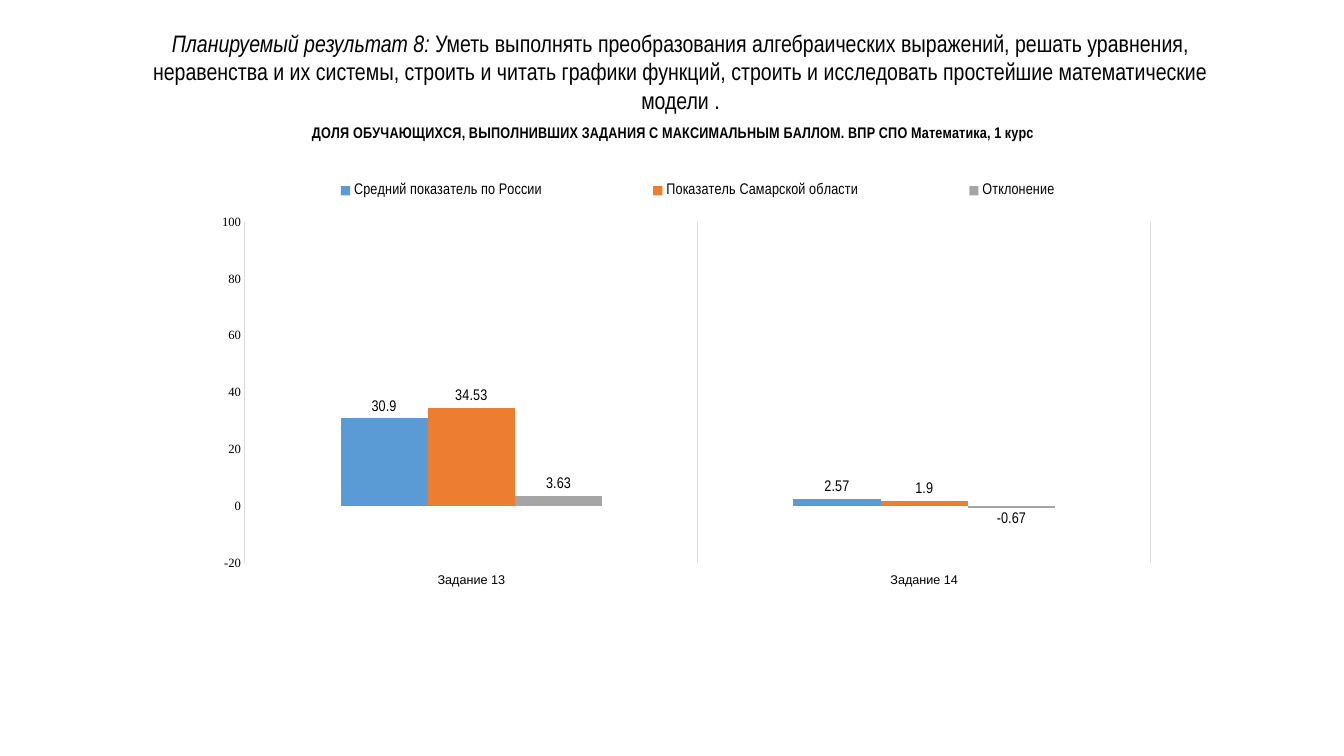
from pptx import Presentation
from pptx.chart.data import CategoryChartData as Data
from pptx.dml.color import RGBColor as Rgb
from pptx.enum.chart import XL_CHART_TYPE as Kind, XL_LABEL_POSITION as Spot
from pptx.enum.chart import XL_LEGEND_POSITION as Side, XL_TICK_LABEL_POSITION as Tick
from pptx.enum.chart import XL_TICK_MARK as Mark
from pptx.enum.text import MSO_ANCHOR as Anchor, PP_ALIGN as Align
from pptx.oxml import parse_xml
from pptx.oxml.ns import nsdecls
from pptx.util import Pt

PX = 9144  # one hundred px to the inch
COLORS = {"ink": "000000", "grid": "D9D9D9", "russia": "5B9BD5",
          "samara": "ED7D31", "gap": "A5A5A5"}
NARROW = "Arial Narrow"
TASKS = ["Задание 13", "Задание 14"]
SERIES = [("Средний показатель по России", (30.9, 2.57), "russia"),
          ("Показатель Самарской области", (34.53, 1.9), "samara"),
          ("Отклонение", (3.63, -0.67), "gap")]
GOAL = [("Планируемый результат 8: ", True),
        ("Уметь выполнять преобразования алгебраических выражений, решать уравнения, "
         "неравенства и их системы, строить и читать графики функций, строить и "
         "исследовать простейшие математические модели .", False)]
HEAD = ("ДОЛЯ ОБУЧАЮЩИХСЯ, ВЫПОЛНИВШИХ ЗАДАНИЯ С МАКСИМАЛЬНЫМ БАЛЛОМ. "
        "ВПР СПО Математика, 1 курс")


def px(*nums):
    return [n * PX for n in nums]


def color(name):
    return Rgb.from_string(COLORS[name])


def assign(obj, **vals):
    for key, val in vals.items():
        setattr(obj, key, val)


def style(font, size, name=NARROW, bold=False, italic=False):
    assign(font, size=Pt(size), name=name, bold=bold, italic=italic)
    font.color.rgb = color("ink")


def layout(x, y, w, h, inner=False):
    target = '<c:layoutTarget val="inner"/>' if inner else ""
    modes = "".join(f'<c:{k}Mode val="edge"/>' for k in "xy")
    sizes = "".join(f'<c:{k} val="{v}"/>' for k, v in zip("xywh", (x, y, w, h)))
    return parse_xml(f'<c:layout {nsdecls("c")}><c:manualLayout>{target}{modes}{sizes}'
                     '</c:manualLayout></c:layout>')


def add_goal(slide):
    title = slide.shapes.title
    box = dict(zip(("left", "top", "width", "height"), px(102, 23, 1146, 96)))
    assign(title, **box)
    frame = title.text_frame
    assign(frame, word_wrap=True, vertical_anchor=Anchor.TOP)
    para = frame.paragraphs[0]
    assign(para, alignment=Align.CENTER, line_spacing=1.0)
    for text, slant in GOAL:
        run = para.add_run()
        run.text = text
        style(run.font, 17, italic=slant)


def format_axis(axis, font):
    assign(axis, major_tick_mark=Mark.NONE, minor_tick_mark=Mark.NONE)
    axis.format.line.fill.background()
    style(axis.tick_labels.font, 9, font)


def add_legend(chart):
    chart.has_legend = True
    legend = chart.legend
    assign(legend, position=Side.TOP, include_in_layout=False)
    style(legend.font, 11)
    item = legend._element
    for old in item.findall("{*}layout"):
        item.remove(old)
    item.find("{*}legendPos").addnext(layout(0.05, 0.13, 0.95, 0.06))


def add_bars(slide):
    data = Data()
    data.categories = TASKS
    for name, vals, _ in SERIES:
        data.add_series(name, vals)
    chart = slide.shapes.add_chart(Kind.COLUMN_CLUSTERED,
                                   *px(185, 106, 966, 520), data).chart
    style(chart.font, 10, "Times New Roman")

    # Heading and legend
    frame = chart.chart_title.text_frame
    frame.text = HEAD
    style(frame.paragraphs[0].runs[0].font, 11, bold=True)
    chart.chart_title.include_in_layout = False
    add_legend(chart)

    # Axes
    tasks, share = chart.category_axis, chart.value_axis
    format_axis(tasks, "Arial")
    format_axis(share, "Times New Roman")
    tasks.tick_label_position = Tick.LOW
    tasks.has_major_gridlines = True
    line = tasks.major_gridlines.format.line
    line.width = Pt(0.75)
    line.color.rgb = color("grid")
    assign(share, minimum_scale=-20, maximum_scale=100, major_unit=20,
           has_major_gridlines=False)

    # Columns and their labels
    plot = chart.plots[0]
    assign(plot, gap_width=219, overlap=0, vary_by_categories=False)
    for bar, (_, _, tone) in zip(plot.series, SERIES):
        bar.invert_if_negative = False
        bar.format.fill.solid()
        bar.format.fill.fore_color.rgb = color(tone)
        labels = bar.data_labels
        assign(labels, show_value=True, position=Spot.OUTSIDE_END)
        style(labels.font, 11)

    # Plot area
    area = chart._chartSpace.chart.plotArea
    for old in area.findall("{*}layout"):
        area.remove(old)
    area.insert(0, layout(0.06, 0.22, 0.93, 0.65, inner=True))


def main():
    deck = Presentation()
    deck.slide_width, deck.slide_height = px(1333, 750)
    slide = deck.slides.add_slide(deck.slide_layouts[5])
    add_goal(slide)
    add_bars(slide)
    deck.save("out.pptx")


if __name__ == "__main__":
    main()
